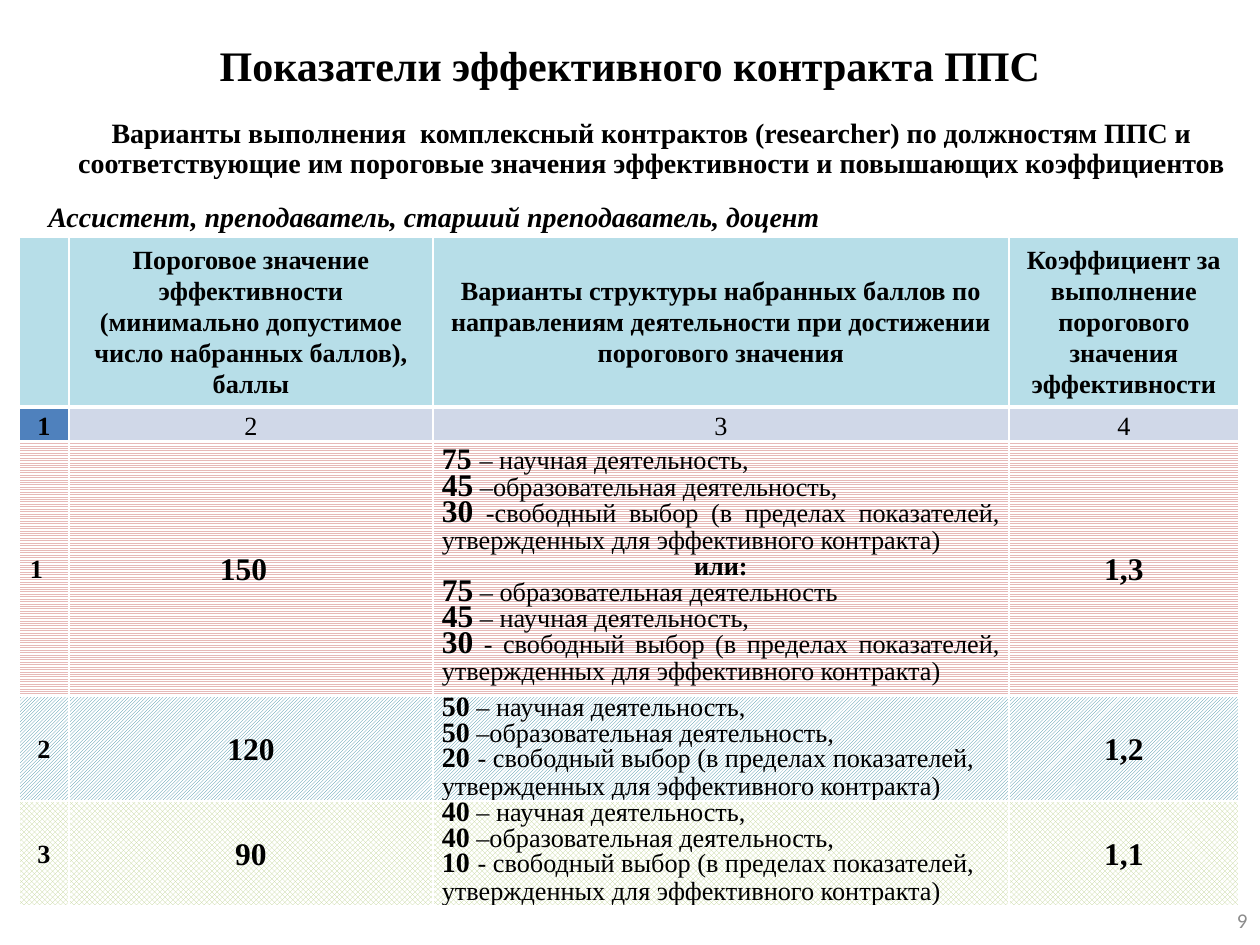
from lxml import etree
from pptx import Presentation
from pptx import util as u
from pptx.dml.color import RGBColor
from pptx.enum import dml, text
from pptx.oxml.ns import qn

ALIGN, ANCHOR, PATTERN = text.PP_ALIGN, text.MSO_ANCHOR, dml.MSO_PATTERN
SCALE = 914400 / 126


def px(length):
    return u.Emu(round(length * SCALE))


def color(value):
    return RGBColor.from_string(value)


def apply(target, values):
    for name, value in values.items():
        setattr(target, name, value)


class SlideBuilder:
    font = "Times New Roman"
    ink = "000000"
    white = "FFFFFF"

    def __init__(self, width, height):
        self.deck = Presentation()
        apply(self.deck, {"slide_width": px(width), "slide_height": px(height)})
        self.page = self.deck.slides.add_slide(self.deck.slide_layouts[6])

    def span(self, para, words, size, bold=False, italic=False, font=None, ink=None):
        run = para.add_run()
        run.text = words
        apply(run.font, {"size": u.Pt(size), "bold": bold, "italic": italic,
                         "name": font or self.font})
        run.font.color.rgb = color(ink or self.ink)

    def box(self, at, words, size, align=ALIGN.CENTER, anchor=ANCHOR.MIDDLE,
            wrap=True, spacing=1.0, **style):
        frame = self.page.shapes.add_textbox(*map(px, at)).text_frame
        apply(frame, {"word_wrap": wrap, "vertical_anchor": anchor})
        para = frame.paragraphs[0]
        apply(para, {"alignment": align, "line_spacing": spacing})
        self.span(para, words, size, **style)

    def table(self, left, top, widths, heights):
        grid = self.page.shapes.add_table(
            len(heights), len(widths), px(left), px(top),
            px(sum(widths)), px(sum(heights))).table
        for column, width in zip(grid.columns, widths):
            column.width = px(width)
        for row, height in zip(grid.rows, heights):
            row.height = px(height)
        return grid

    def borders(self, cell, top=1, bottom=1):
        properties = cell._tc.get_or_add_tcPr()
        sides = {"lnL": 1, "lnR": 1, "lnT": top, "lnB": bottom}
        for place, (side, width) in enumerate(sides.items()):
            line = etree.Element(qn(f"a:{side}"), w=str(u.Pt(width)))
            solid = etree.SubElement(line, qn("a:solidFill"))
            etree.SubElement(solid, qn("a:srgbClr"), val=self.white)
            properties.insert(place, line)

    def cell(self, cell, paras, fill, anchor=ANCHOR.MIDDLE, right=9, **edges):
        """Fill one cell; paras holds (alignment, line spacing, runs)."""
        apply(cell, {"vertical_anchor": anchor, "margin_left": px(9),
                     "margin_right": px(right), "margin_top": 0, "margin_bottom": 0})
        if isinstance(fill, str):
            cell.fill.solid()
            cell.fill.fore_color.rgb = color(fill)
        else:
            cell.fill.patterned()
            cell.fill.pattern, front = fill
            cell.fill.fore_color.rgb = color(front)
            cell.fill.back_color.rgb = color(self.white)
        self.borders(cell, **edges)
        frame = cell.text_frame
        for index, (align, spacing, runs) in enumerate(paras):
            para = frame.add_paragraph() if index else frame.paragraphs[0]
            apply(para, {"alignment": align, "line_spacing": spacing})
            for run in runs:
                self.span(para, *run)


def centred(words, size, bold=True):
    return [(ALIGN.CENTER, 1.07, [(words, size, bold)])]


def variant(align, *lines):
    """Lines are (points, points size, gap size, description)."""
    return [(align, u.Pt(15), [(points, size, True), (" ", gap, False),
                               (words, 15, False)])
            for points, size, gap, words in lines]


SCIENCE = "– научная деятельность,"
TEACHING = "–образовательная деятельность,"
FREE = "свободный выбор (в пределах показателей, утвержденных для эффективного контракта)"
HEADERS = [
    "",
    "Пороговое значение эффективности (минимально допустимое число набранных баллов), баллы",
    "Варианты структуры набранных баллов по направлениям деятельности при достижении "
    "порогового значения",
    "Коэффициент за выполнение порогового значения эффективности",
]


def short_variant(main, free):
    return variant(ALIGN.LEFT, (main, 16, 15, SCIENCE), (main, 16, 15, TEACHING),
                   (free, 16, 18, "- " + FREE))


FULL_VARIANT = (
    variant(ALIGN.JUSTIFY, ("75", 17, 18, SCIENCE), ("45", 18, 15, TEACHING),
            ("30", 18, 15, "-" + FREE))
    + [(ALIGN.CENTER, u.Pt(15), [("или:", 15, True)])]
    + variant(ALIGN.JUSTIFY, ("75", 18, 15, "– образовательная деятельность"),
              ("45", 18, 15, SCIENCE), ("30", 18, 15, "- " + FREE)))

# number, threshold, structure, coefficient, fill, right margin of the first two cells
LEVELS = [
    ("1", "150", FULL_VARIANT, "1,3", (PATTERN.NARROW_HORIZONTAL, "E6B9B8"), 24),
    ("2", "120", short_variant("50", "20"), "1,2",
     (PATTERN.LIGHT_UPWARD_DIAGONAL, "31859C"), 9),
    ("3", "90", short_variant("40", "10"), "1,1", (PATTERN.TRELLIS, "C3D69B"), 9),
]


def main():
    slide = SlideBuilder(1260, 945)
    slide.box((63, 38, 1134, 54), "Показатели эффективного контракта ППС", 24, bold=True)
    slide.box((966, 895, 294, 50), "9", 12, ALIGN.RIGHT, font="Calibri", ink="8C8C8C")
    slide.box((63, 113, 1177, 115),
              "Варианты выполнения  комплексный контрактов (researcher) по должностям ППС и "
              "соответствующие им пороговые значения эффективности и повышающих коэффициентов",
              16, anchor=ANCHOR.TOP, spacing=0.9, bold=True)
    slide.box((30, 193, 808, 47), "Ассистент, преподаватель, старший преподаватель, доцент",
              16, wrap=False, bold=True, italic=True)

    grid = slide.table(19, 237, (50, 364, 576, 230), (170, 34, 255, 105, 105))
    for column, header in enumerate(HEADERS):
        paras = centred(header, 15) if header else []
        slide.cell(grid.cell(0, column), paras, "B7DEE8", bottom=3)
        first = column == 0
        slide.cell(grid.cell(1, column), centred(str(column + 1), 15, first),
                   "4F81BD" if first else "D0D8E8", ANCHOR.BOTTOM, top=3)
    for row, (number, threshold, structure, factor, fill, right) in enumerate(LEVELS, 2):
        contents = [(centred(number, 15), right), (centred(threshold, 18), right),
                    (structure, 9), (centred(factor, 18), 9)]
        for column, (paras, margin) in enumerate(contents):
            slide.cell(grid.cell(row, column), paras, fill, right=margin)

    slide.deck.save("out.pptx")


if __name__ == "__main__":
    main()
